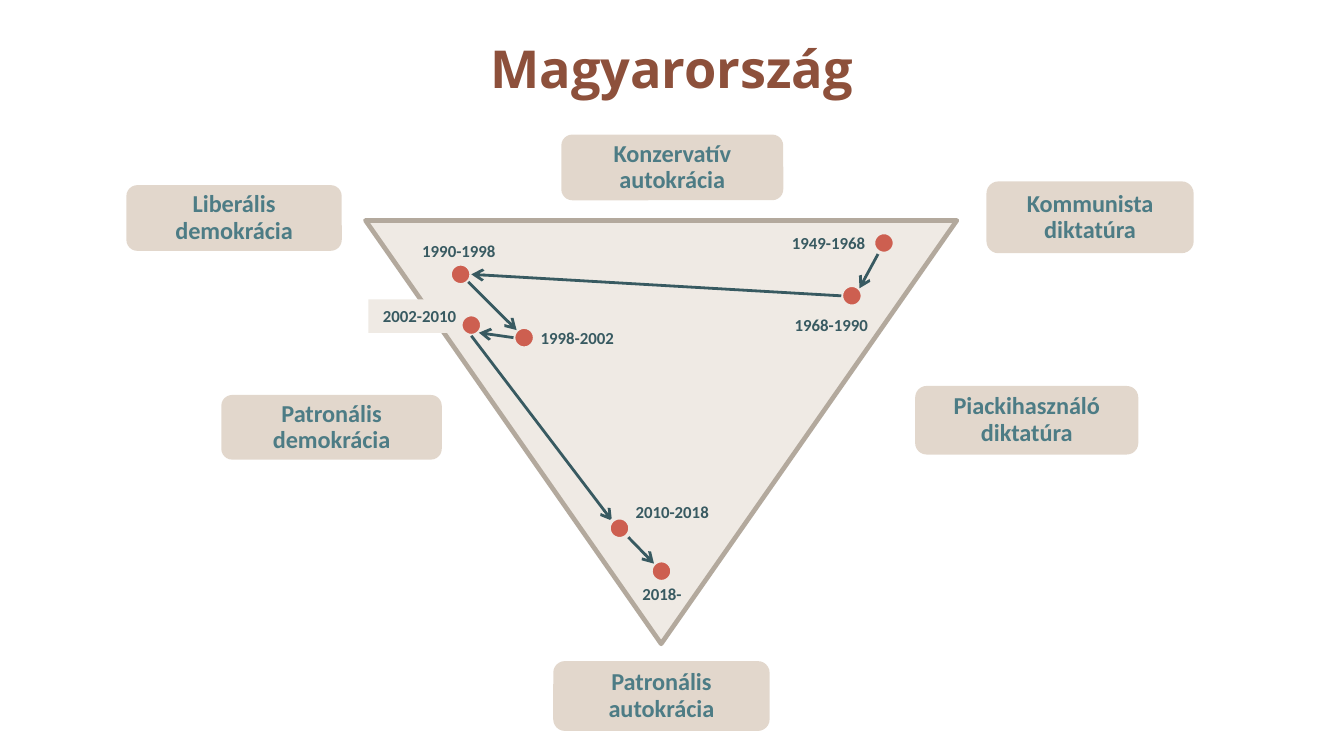
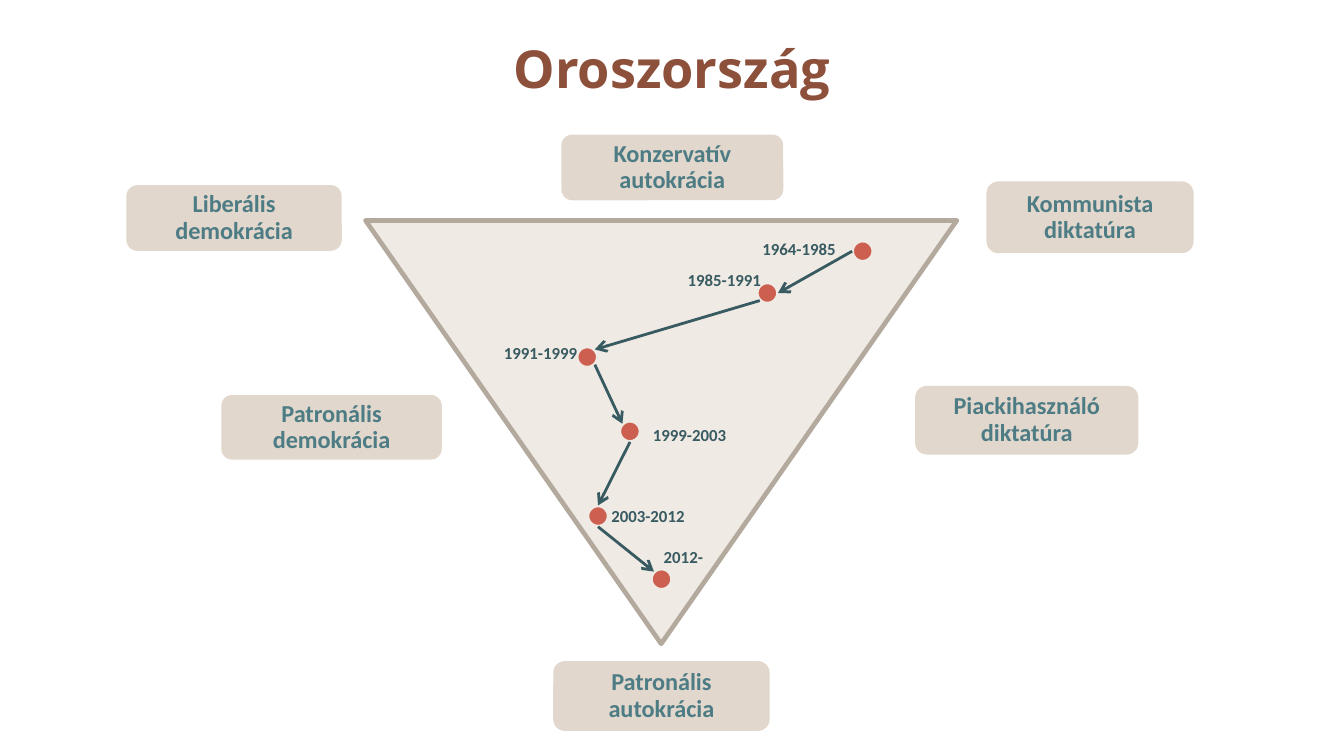
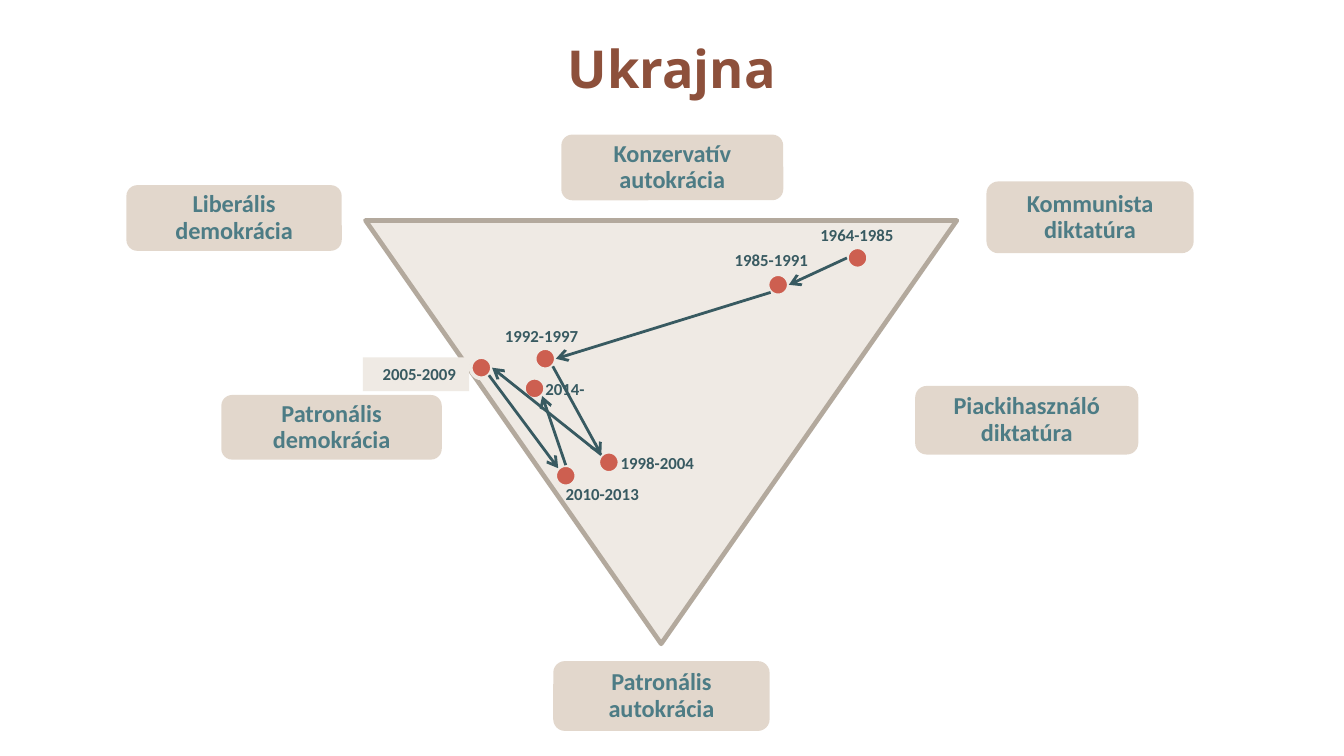
from dataclasses import dataclass
from itertools import pairwise

from pptx import Presentation
from pptx.dml.color import RGBColor
from pptx.enum.shapes import MSO_CONNECTOR as Connector, MSO_SHAPE as Shape
from pptx.enum.text import MSO_ANCHOR as Anchor, MSO_AUTO_SIZE as AutoSize, PP_ALIGN as Align
from pptx.oxml.ns import qn
from pptx.util import Pt
from lxml.etree import SubElement


@dataclass(frozen=True)
class Theme:
    title: str = "8D503B"
    regime_text: str = "4D7C85"
    regime_fill: str = "C7B09A"
    regime_alpha: int = 50000
    triangle: str = "EFEAE4"
    edge: str = "B3A99D"
    dot: str = "CD5F50"
    period: str = "385A61"
    title_font: str = "Open Sans"
    body_font: str = "Calibri"
    title_size: int = 28
    regime_size: int = 13
    period_size: int = 9


THEME = Theme()
TITLE_AREA = (8.4, 0, 703, 72)
TRIANGLE_AREA = (195.8, 118.1, 316.8, 226.8)
DOT_SIZE = 11.4
LABEL_HEIGHT = 18

REGIMES = [
    ("Kommunista diktatúra", (528.5, 97.2, 111, 38.5)),
    ("Liberális demokrácia", (67.7, 99.2, 115.4, 35.2)),
    ("Patronális autokrácia", (296.4, 354.2, 115.9, 37.4)),
    ("Konzervatív autokrácia", (300.7, 72.1, 118.9, 35.2)),
    ("Piackihasználó diktatúra", (490.3, 206.8, 119.5, 36.7)),
    ("Patronális demokrácia", (118.6, 211.6, 118.1, 34.6)),
]

SIDES = {
    "middle": (0, 0), "top": (0, -1), "bottom": (0, 1), "left": (-1, 0), "right": (1, 0),
    "top left": (-0.71, -0.71), "top right": (0.71, -0.71),
    "bottom left": (-0.71, 0.71), "bottom right": (0.71, 0.71),
}


@dataclass(frozen=True)
class Period:
    years: str
    centre: tuple
    arrive: str
    depart: str
    label: tuple
    align: Align = Align.CENTER
    boxed: bool = False


COUNTRIES = {
    "Magyarország": [
        Period("1949-1968", (473.6, 130.2), "", "middle", (415.4, 121, 56.9)),
        Period("1968-1990", (456.4, 158.5), "top right", "left", (416.9, 164.9, 56.9)),
        Period("1990-1998", (246.8, 147), "right", "bottom right", (217.4, 125.3, 56.9)),
        Period("1998-2002", (280.8, 180.9), "top left", "left", (280.8, 172.1, 56.9)),
        Period("2002-2010", (252.5, 174.2), "bottom right", "bottom", (197.4, 160.4, 54.7),
               boxed=True),
        Period("2010-2018", (331.9, 283), "top left", "middle", (333.4, 265, 54.7), Align.LEFT),
        Period("2018-", (354.4, 306), "top left", "", (334.8, 308.9, 39.6)),
    ],
    "Oroszország": [
        Period("1964-1985", (462.2, 134.6), "", "left", (399.6, 124.1, 56.9)),
        Period("1985-1991", (411.1, 157), "right", "bottom left", (359.6, 141.1, 56.9)),
        Period("1991-1999", (314.6, 191.3), "top right", "bottom right", (262.2, 180, 54.7)),
        Period("1999-2003", (337.5, 231.1), "top left", "bottom", (342.7, 223.9, 56.9), Align.LEFT),
        Period("2003-2012", (320.4, 276.5), "top", "bottom", (320.4, 267.1, 56.9), Align.LEFT),
        Period("2012-", (354.4, 310.3), "top left", "", (348.5, 289.4, 39.6), Align.LEFT),
    ],
    "Ukrajna": [
        Period("1964-1985", (459.4, 138.2), "", "left", (430.6, 116.6, 56.9)),
        Period("1985-1991", (416.9, 152.6), "right", "bottom left", (385.2, 130.3, 54.7),
               Align.RIGHT),
        Period("1992-1997", (292.1, 192.2), "right", "bottom right", (262.8, 170.8, 54.7)),
        Period("1998-2004", (326.2, 247.7), "top left", "top left", (325.4, 239, 56.9), Align.LEFT),
        Period("2005-2009", (257.9, 197), "right", "bottom right", (194.4, 191.5, 56.9),
               Align.RIGHT, boxed=True),
        Period("2010-2013", (303.1, 254.9), "top left", "top", (295.9, 255.6, 54.7), Align.LEFT),
        Period("2014-", (286.4, 208.1), "bottom right", "", (285.1, 199.4, 36), Align.LEFT),
    ],
}


def points(values):
    return [Pt(value) for value in values]


def colour(value):
    return RGBColor.from_string(value)


def write(box, text, font, size, text_colour, align=Align.CENTER):
    frame = box.text_frame
    frame.word_wrap = True
    frame.text = text
    para = frame.paragraphs[0]
    para.alignment = align
    span = para.runs[0].font
    span.name, span.size, span.bold = font, Pt(size), True
    span.color.rgb = colour(text_colour)
    return frame


def add_filled(page, kind, area, fill, line=None, width=0):
    shape = page.shapes.add_shape(kind, *points(area))
    shape.shadow.inherit = False
    shape.fill.solid()
    shape.fill.fore_color.rgb = colour(fill)
    if line:
        shape.line.color.rgb = colour(line)
        shape.line.width = Pt(width)
    else:
        shape.line.fill.background()
    return shape


def add_title(page, text):
    box = page.shapes.title
    box.left, box.top, box.width, box.height = points(TITLE_AREA)
    frame = write(box, text, THEME.title_font, THEME.title_size, THEME.title)
    frame.vertical_anchor = Anchor.MIDDLE
    frame.auto_size = AutoSize.NONE


def add_regime(page, name, area):
    box = add_filled(page, Shape.ROUNDED_RECTANGLE, area, THEME.regime_fill)
    tint = box.element.spPr.find(qn("a:solidFill"))[0]
    SubElement(tint, qn("a:alpha")).set("val", str(THEME.regime_alpha))
    frame = write(box, name, THEME.body_font, THEME.regime_size, THEME.regime_text)
    frame.vertical_anchor = Anchor.MIDDLE
    frame.margin_left = frame.margin_right = frame.margin_top = frame.margin_bottom = Pt(3.6)
    frame.paragraphs[0].line_spacing = 0.9


def add_label(page, period):
    area = (*period.label, LABEL_HEIGHT)
    if period.boxed:
        box = add_filled(page, Shape.RECTANGLE, area, THEME.triangle)
    else:
        box = page.shapes.add_textbox(*points(area))
    frame = write(box, period.years, THEME.body_font, THEME.period_size, THEME.period, period.align)
    frame.vertical_anchor = Anchor.TOP
    frame.auto_size = AutoSize.SHAPE_TO_FIT_TEXT


def add_labels(page, periods, boxed):
    for period in periods:
        if period.boxed == boxed:
            add_label(page, period)


def add_dots(page, periods, over_arrows):
    for period in periods:
        if (period.depart == "middle") == over_arrows:
            x, y = period.centre
            area = (x - DOT_SIZE / 2, y - DOT_SIZE / 2, DOT_SIZE, DOT_SIZE)
            add_filled(page, Shape.OVAL, area, THEME.dot, THEME.triangle, 2)


def rim(period, side):
    return [at + step * DOT_SIZE / 2 for at, step in zip(period.centre, SIDES[side])]


def add_arrow(page, start, end):
    ends = points(rim(start, start.depart) + rim(end, end.arrive))
    arrow = page.shapes.add_connector(Connector.STRAIGHT, *ends)
    arrow.line.color.rgb = colour(THEME.period)
    arrow.line.width = Pt(1.5)
    props = arrow.element.spPr
    SubElement(props.find(qn("a:ln")), qn("a:tailEnd")).set("type", "arrow")
    SubElement(props, qn("a:effectLst"))


def add_country(deck, name, periods):
    page = deck.slides.add_slide(deck.slide_layouts[5])
    add_title(page, name)
    triangle = add_filled(page, Shape.ISOSCELES_TRIANGLE, TRIANGLE_AREA,
                          THEME.triangle, THEME.edge, 2.5)
    triangle.rotation = 180
    for regime, area in REGIMES:
        add_regime(page, regime, area)
    add_labels(page, periods, boxed=True)
    add_dots(page, periods, over_arrows=False)
    for start, end in pairwise(periods):
        add_arrow(page, start, end)
    add_dots(page, periods, over_arrows=True)
    add_labels(page, periods, boxed=False)


def main():
    deck = Presentation()
    deck.slide_width, deck.slide_height = Pt(720), Pt(405)
    for name, periods in COUNTRIES.items():
        add_country(deck, name, periods)
    deck.save("out.pptx")


if __name__ == "__main__":
    main()
